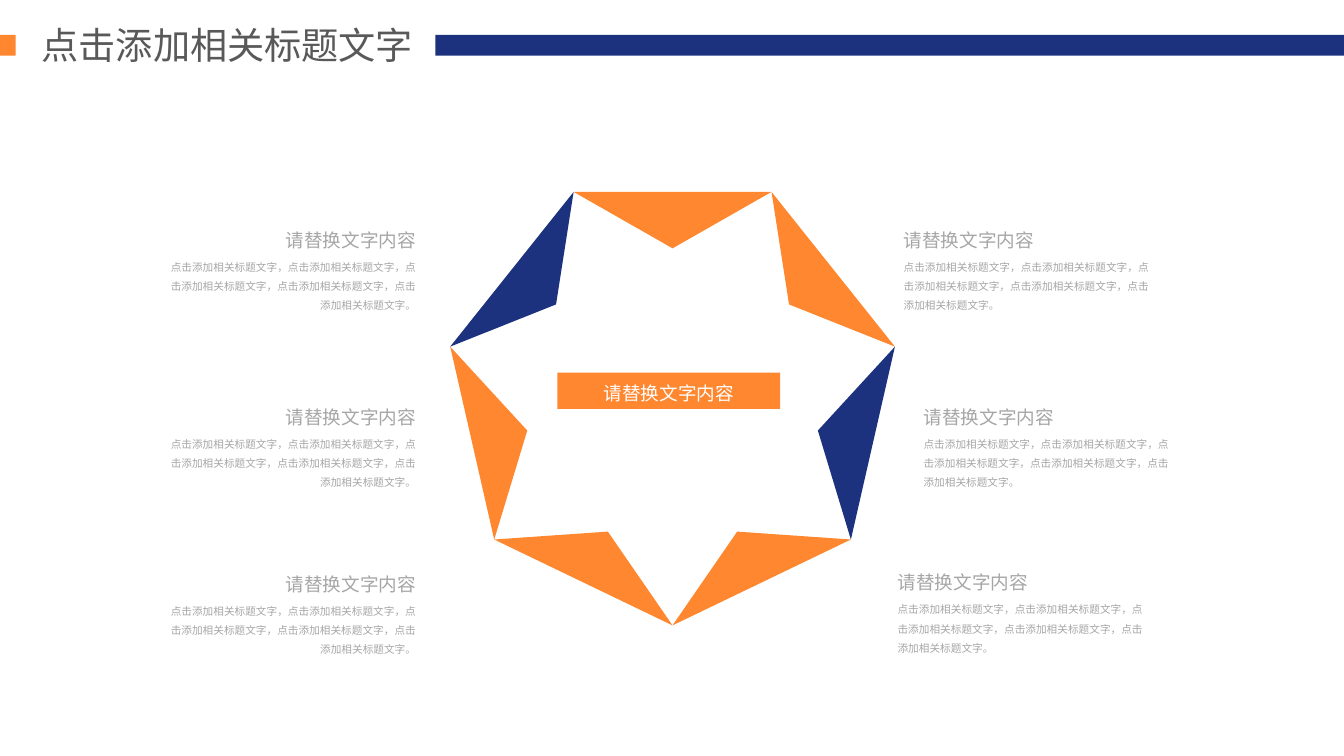
import math

import pptx
import pptx.dml.color
import pptx.enum.shapes
import pptx.enum.text
import pptx.util

Cm = pptx.util.Cm
ALIGN = pptx.enum.text.PP_ALIGN
ANCHOR = pptx.enum.text.MSO_ANCHOR

COLOURS = {
    "navy": "1C327F",
    "orange": "FF872F",
    "white": "FFFFFF",
    "title": "595959",
    "grey": "A6A6A6",
}
SLIDE_WIDTH, SLIDE_HEIGHT = 35.71, 20.09
HEADING = "请替换文字内容"
BODY = "点击添加相关标题文字，" * 4 + "点击添加相关标题文字。"


def rgb(name):
    return pptx.dml.color.RGBColor.from_string(COLOURS[name])


def paint(shape, colour):
    shape.shadow.inherit = False
    shape.fill.solid()
    shape.fill.fore_color.rgb = rgb(colour)
    shape.line.fill.background()


def add_bar(slide, box, colour):
    rectangle = pptx.enum.shapes.MSO_SHAPE.RECTANGLE
    shape = slide.shapes.add_shape(rectangle, *map(Cm, box))
    paint(shape, colour)
    return shape


def write(shape, text, size, font, colour, frame_format, paragraph_format):
    frame = shape.text_frame
    for name, value in frame_format.items():
        setattr(frame, name, value)
    paragraph = frame.paragraphs[0]
    for name, value in paragraph_format.items():
        setattr(paragraph, name, value)
    run = paragraph.add_run()
    run.text = text
    run_format = {"size": pptx.util.Pt(size), "name": font}
    for name, value in run_format.items():
        setattr(run.font, name, value)
    run.font.color.rgb = rgb(colour)


def add_header(slide, left, top, width):
    """Orange tab, title and navy bar along the top edge."""
    bar_top, bar_height, bar_left = top + 0.93, 0.55, left + 11.57
    add_bar(slide, (bar_left, bar_top, width - bar_left, bar_height), "navy")
    add_bar(slide, (left, bar_top, 0.42, bar_height), "orange")
    title = slide.shapes.add_textbox(Cm(left + 0.86), Cm(top + 0.46), Cm(10.49), Cm(1.45))
    write(title, "点击添加相关标题文字", 28, "Noto Sans CJK SC", "title",
          {"word_wrap": False}, {"alignment": ALIGN.LEFT})


def add_heptagon(slide, centre_x, centre_y, radius, inner_radius):
    """Seven triangles on the sides of a heptagon, clockwise from the top."""
    def point(distance, angle):
        return (Cm(centre_x + distance * math.sin(angle)),
                Cm(centre_y - distance * math.cos(angle)))

    colours = ["orange", "orange", "navy", "orange", "orange", "orange", "navy"]
    half_step = math.pi / len(colours)
    for index, colour in enumerate(colours):
        middle = 2 * half_step * index
        builder = slide.shapes.build_freeform(*point(radius, middle - half_step))
        builder.add_line_segments([point(radius, middle + half_step),
                                   point(inner_radius, middle)])
        paint(builder.convert_to_shape(), colour)


def add_centre_label(slide, box):
    label = add_bar(slide, box, "orange")
    write(label, HEADING, 14, "Arial", "white",
          {"word_wrap": True, "vertical_anchor": ANCHOR.MIDDLE},
          {"alignment": ALIGN.CENTER, "line_spacing": 1.2,
           "space_before": pptx.util.Pt(2.8)})


def add_callout(slide, left, top, width, alignment):
    """Heading with a small paragraph below it."""
    frame_format = {"word_wrap": True, "margin_left": Cm(0.27), "margin_right": Cm(0.27)}
    parts = [
        (HEADING, 14, "Arial", 1.2, 0, 0.99),
        (BODY, 8, "Noto Sans CJK SC", 1.5, 0.8, 1.8),
    ]
    for text, size, font, spacing, offset, height in parts:
        box = slide.shapes.add_textbox(Cm(left), Cm(top + offset), Cm(width), Cm(height))
        write(box, text, size, font, "grey", frame_format,
              {"alignment": alignment, "line_spacing": spacing})


def main():
    presentation = pptx.Presentation()
    presentation.slide_width = Cm(SLIDE_WIDTH)
    presentation.slide_height = Cm(SLIDE_HEIGHT)
    slide = presentation.slides.add_slide(presentation.slide_layouts[6])

    add_header(slide, 0, 0, SLIDE_WIDTH)
    add_heptagon(slide, 17.87, 10.56, 6.06, 3.96)
    add_centre_label(slide, (14.81, 9.9, 5.92, 0.97))

    # Callouts: right-aligned on the left side, left-aligned on the right
    callout_width = 7.1
    for top in (5.83, 10.55, 14.97):
        add_callout(slide, 4.23, top, callout_width, ALIGN.RIGHT)
    for left, top in ((23.74, 5.83), (24.27, 10.55), (23.58, 14.94)):
        add_callout(slide, left, top, callout_width, ALIGN.LEFT)

    presentation.save("out.pptx")


if __name__ == "__main__":
    main()
